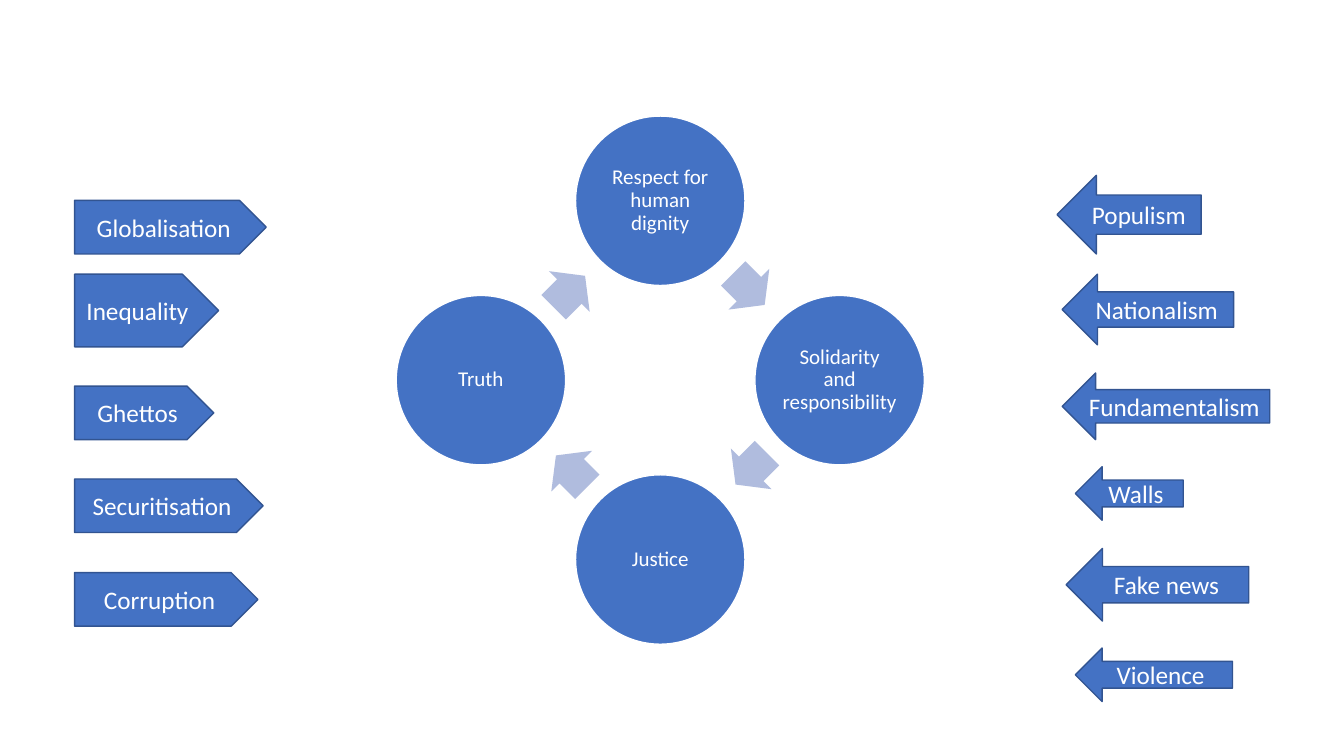
"""Build a slide with a cycle of four values between two columns of pressures."""
import math

import pptx
import pptx.dml.color
import pptx.enum.shapes
import pptx.enum.text
import pptx.util

Cm = pptx.util.Cm
Pt = pptx.util.Pt
RGBColor = pptx.dml.color.RGBColor
MSO_SHAPE = pptx.enum.shapes.MSO_SHAPE

BLUE = RGBColor(0x44, 0x72, 0xC4)
DARK_BLUE = RGBColor(0x32, 0x54, 0x91)
PALE_BLUE = RGBColor(0xB0, 0xBC, 0xDE)
WHITE = RGBColor(0xFF, 0xFF, 0xFF)

VALUES = ["Respect for human dignity", "Solidarity and responsibility", "Justice", "Truth"]
LEFT_TAGS = [
    ("Globalisation", 1.88, 5.05, 4.83, 1.35),
    ("Inequality", 1.88, 6.91, 3.63, 1.83),
    ("Ghettos", 1.88, 9.73, 3.51, 1.35),
    ("Securitisation", 1.88, 12.07, 4.75, 1.35),
    ("Corruption", 1.88, 14.43, 4.62, 1.35),
]
RIGHT_TAGS = [
    ("Populism", 26.64, 4.42, 3.63, 1.98),
    ("Nationalism", 26.77, 6.91, 4.32, 1.78),
    ("Fundamentalism", 26.77, 9.4, 5.23, 1.68),
    ("Walls", 27.1, 11.76, 2.72, 1.35),
    ("Fake news", 26.87, 13.82, 4.6, 1.83),
    ("Violence", 27.1, 16.33, 3.96, 1.35),
]

CENTRE_X, CENTRE_Y = 16.64, 9.58
CIRCLE_RADIUS, CIRCLE_SIZE = 4.52, 4.27
ARROW_RADIUS, ARROW_W, ARROW_H = 3.2, 1.12, 1.45
ARROW_SETBACK = 0.04


def add_shape(slide, kind, x, y, w, h, fill, line=None):
    sp = slide.shapes.add_shape(kind, Cm(x), Cm(y), Cm(w), Cm(h))
    sp.shadow.inherit = False
    sp.fill.solid()
    sp.fill.fore_color.rgb = fill
    if line is None:
        sp.line.fill.background()
    else:
        sp.line.color.rgb = line
        sp.line.width = Pt(1)
    return sp


def set_text(sp, text, size):
    tf = sp.text_frame
    tf.word_wrap = True
    tf.vertical_anchor = pptx.enum.text.MSO_ANCHOR.MIDDLE
    p = tf.paragraphs[0]
    p.text = text
    p.alignment = pptx.enum.text.PP_ALIGN.CENTER
    p.font.name = "Calibri"
    p.font.size = Pt(size)
    p.font.color.rgb = WHITE
    return tf


def add_cycle(slide):
    for i, value in enumerate(VALUES):
        angle = math.radians(90 * i - 90)
        x = CENTRE_X + CIRCLE_RADIUS * math.cos(angle) - CIRCLE_SIZE / 2
        y = CENTRE_Y + CIRCLE_RADIUS * math.sin(angle) - CIRCLE_SIZE / 2
        sp = add_shape(slide, MSO_SHAPE.OVAL, x, y, CIRCLE_SIZE, CIRCLE_SIZE, BLUE, WHITE)
        tf = set_text(sp, value, 15)
        tf.margin_left = tf.margin_right = tf.margin_top = tf.margin_bottom = Cm(0.05)
        tf.paragraphs[0].line_spacing = 0.9

        heading = 90 * i + 45
        turn = math.radians(heading)
        x = CENTRE_X + ARROW_RADIUS * math.sin(turn) - ARROW_SETBACK * math.cos(turn)
        y = CENTRE_Y - ARROW_RADIUS * math.cos(turn) - ARROW_SETBACK * math.sin(turn)
        sp = add_shape(slide, MSO_SHAPE.RIGHT_ARROW, x - ARROW_W / 2, y - ARROW_H / 2,
                       ARROW_W, ARROW_H, PALE_BLUE)
        sp.adjustments[0] = 0.6
        sp.adjustments[1] = 0.5
        sp.rotation = heading


def main():
    prs = pptx.Presentation()
    prs.slide_width = Cm(33.87)
    prs.slide_height = Cm(19.05)
    slide = prs.slides.add_slide(prs.slide_layouts[6])
    add_cycle(slide)
    for kind, tags in ((MSO_SHAPE.PENTAGON, LEFT_TAGS), (MSO_SHAPE.LEFT_ARROW, RIGHT_TAGS)):
        for text, x, y, w, h in tags:
            sp = add_shape(slide, kind, x, y, w, h, BLUE, DARK_BLUE)
            set_text(sp, text, 18)
    prs.save("out.pptx")


if __name__ == "__main__":
    main()
